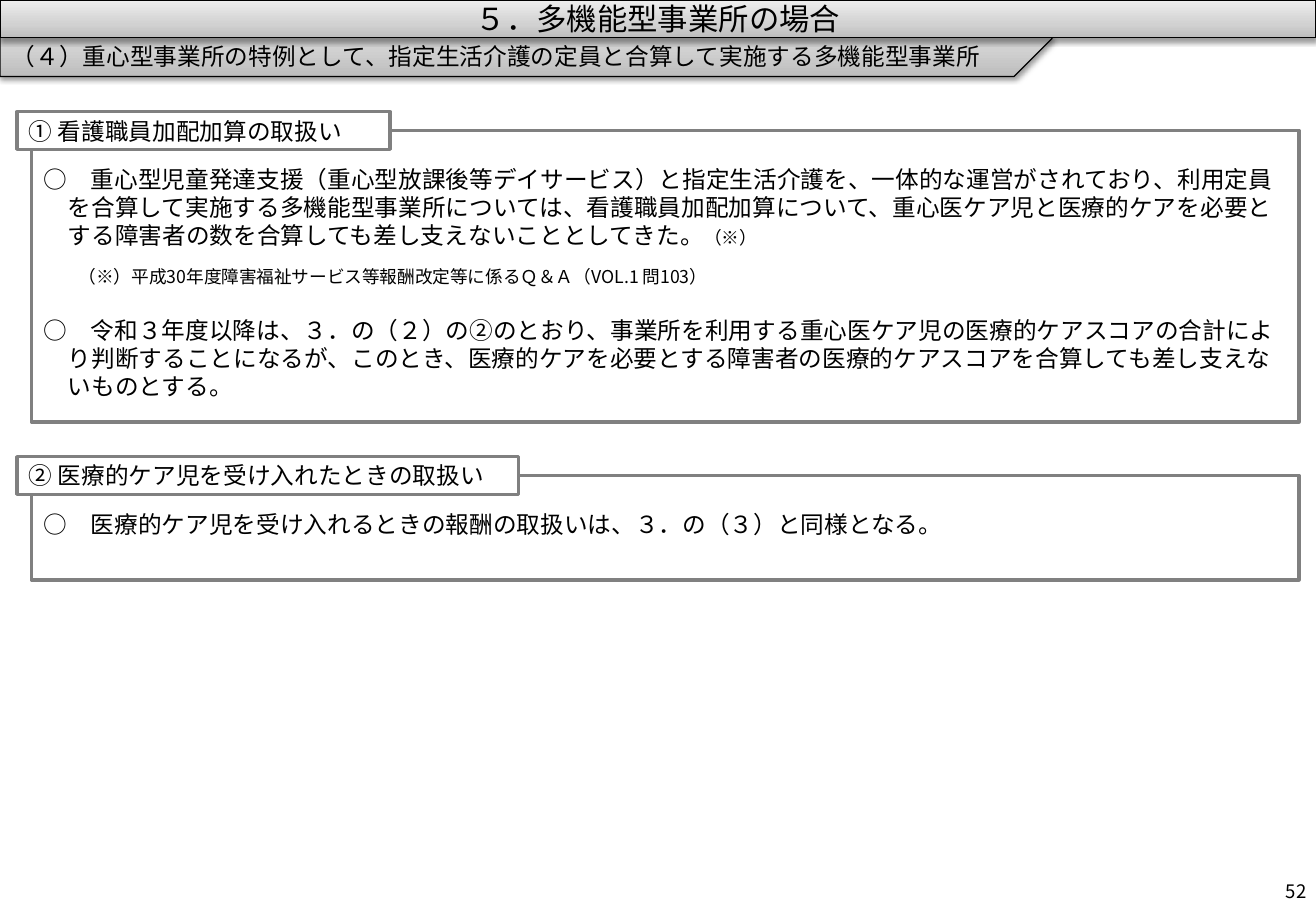
from copy import deepcopy

from lxml import etree
from pptx import Presentation
from pptx.dml.color import RGBColor
from pptx.enum import shapes, text
from pptx.oxml.ns import qn
from pptx.util import Inches, Pt

FONT = "Noto Sans CJK JP"
BLACK, GRAY, WHITE = "000000", "808080", "FFFFFF"
BAR_STOPS = [(0, "BDBDBD"), (0.35, "D1D1D1"), (1, "EEEEEE")]
WIDTH, HEIGHT = 10.83, 7.5

TITLE = "５．多機能型事業所の場合"
SUBTITLE = "（４）重心型事業所の特例として、指定生活介護の定員と合算して実施する多機能型事業所"
PAGE = "52"

# Each paragraph: runs of (text, size), left margin, first-line indent, space before
SECTIONS = [
    {
        "label": "① 看護職員加配加算の取扱い",
        "top": 0.92, "label_width": 3.07, "body_height": 2.4,
        "paragraphs": [
            ([("○　重心型児童発達支援（重心型放課後等デイサービス）と指定生活介護を、"
               "一体的な運営がされており、利用定員を合算して実施する多機能型事業所については、"
               "看護職員加配加算について、重心医ケア児と医療的ケアを必要とする障害者の数を"
               "合算しても差し支えないこととしてきた。", 14), ("（※）", 10.5)], 0.2, -0.2, 0),
            ([("（※）平成30年度障害福祉サービス等報酬改定等に係るＱ＆Ａ（VOL.1 問103）", 10.5)],
             0.29, 0, 9.6),
            ([("○　令和３年度以降は、３．の（２）の②のとおり、事業所を利用する"
               "重心医ケア児の医療的ケアスコアの合計により判断することになるが、このとき、"
               "医療的ケアを必要とする障害者の医療的ケアスコアを合算しても"
               "差し支えないものとする。", 14)], 0.2, -0.2, 16.8),
        ],
    },
    {
        "label": "② 医療的ケア児を受け入れたときの取扱い",
        "top": 3.76, "label_width": 4.13, "body_height": 0.86,
        "paragraphs": [
            ([("○　医療的ケア児を受け入れるときの報酬の取扱いは、３．の（３）と同様となる。", 14)],
             0.2, -0.2, 0),
        ],
    },
]


def color(hex_string):
    return RGBColor.from_string(hex_string)


def place(sp, left, top, width, height):
    sp.left, sp.top, sp.width, sp.height = map(Inches, (left, top, width, height))


def add_box(slide, kind, *at):
    sp = slide.shapes.add_shape(kind, *map(Inches, at))
    sp.shadow.inherit = False
    return sp


def add_frame(slide, *at, alpha=None):
    """Add a white rectangle with a gray border; alpha is its opacity in percent."""
    sp = add_box(slide, shapes.MSO_SHAPE.RECTANGLE, *at)
    sp.fill.solid()
    sp.fill.fore_color.rgb = color(WHITE)
    if alpha is not None:
        rgb = sp.element.spPr.find(f"{qn('a:solidFill')}/{qn('a:srgbClr')}")
        etree.SubElement(rgb, qn("a:alpha"), val=str(alpha * 1000))
    sp.line.color.rgb = color(GRAY)
    sp.line.width = Pt(2)
    return sp


def style_bar(sp):
    """Give a heading bar its gradient, thin outline and soft shadow."""
    sp.fill.gradient()
    sp.fill.gradient_angle = 90
    stop_list = sp.element.spPr.find(f"{qn('a:gradFill')}/{qn('a:gsLst')}")
    stop_list.insert(1, deepcopy(stop_list[0]))
    for stop, (position, shade) in zip(sp.fill.gradient_stops, BAR_STOPS):
        stop.position = position
        stop.color.rgb = color(shade)
    sp.line.color.rgb = color(BLACK)
    sp.line.width = Pt(0.75)
    sp.shadow.inherit = False
    effects = sp.element.spPr.find(qn("a:effectLst"))
    shadow = etree.SubElement(effects, qn("a:outerShdw"), blurRad=str(Pt(3.1)),
                              dist=str(Pt(1.6)), dir="5400000", rotWithShape="0")
    rgb = etree.SubElement(shadow, qn("a:srgbClr"), val=BLACK)
    etree.SubElement(rgb, qn("a:alpha"), val="38000")


def set_frame(tf, anchor, insets=(0.1, 0.05, 0.1, 0.05)):
    tf.word_wrap = True
    tf.auto_size = text.MSO_AUTO_SIZE.NONE
    tf.vertical_anchor = anchor
    tf.margin_left, tf.margin_top, tf.margin_right, tf.margin_bottom = map(Inches, insets)


def write(p, content, size=14, align=text.PP_ALIGN.LEFT, margin=0, indent=0):
    """Add one formatted run to a paragraph and set the paragraph's indents."""
    p.alignment = align
    pPr = p._p.get_or_add_pPr()
    pPr.set("marL", str(Inches(margin)))
    pPr.set("indent", str(Inches(indent)))
    r = p.add_run()
    r.text = content
    r.font.size = Pt(size)
    r.font.color.rgb = color(BLACK)
    r.font.name = FONT
    latin = r.font._element.find(qn("a:latin"))
    latin.addnext(latin.makeelement(qn("a:ea"), typeface=FONT))


def add_section(slide, section):
    top = section["top"]
    body = add_frame(slide, 0.26, top + 0.155, 10.43, section["body_height"], alpha=5)
    tf = body.text_frame
    set_frame(tf, text.MSO_ANCHOR.TOP, (0.1, 0.28, 0.1, 0.08))
    for i, (runs, margin, indent, before) in enumerate(section["paragraphs"]):
        p = tf.add_paragraph() if i else tf.paragraphs[0]
        p.space_before = Pt(before)
        p.line_spacing = Pt(runs[0][1] * 1.2)
        for content, size in runs:
            write(p, content, size=size, margin=margin, indent=indent)

    label = add_frame(slide, 0.14, top, section["label_width"], 0.31)
    set_frame(label.text_frame, text.MSO_ANCHOR.MIDDLE, (0.1, 0.08, 0.1, 0.08))
    write(label.text_frame.paragraphs[0], section["label"], margin=0.19, indent=-0.19)


def main():
    prs = Presentation()
    prs.slide_width, prs.slide_height = Inches(WIDTH), Inches(HEIGHT)
    slide = prs.slides.add_slide(prs.slide_layouts[5])

    subtitle = add_box(slide, shapes.MSO_SHAPE.PENTAGON, 0, 0, 8.66, 0.63)
    style_bar(subtitle)
    set_frame(subtitle.text_frame, text.MSO_ANCHOR.BOTTOM)
    write(subtitle.text_frame.paragraphs[0], SUBTITLE)

    title = slide.shapes.title
    place(title, 0, 0, WIDTH, 0.31)
    style_bar(title)
    set_frame(title.text_frame, text.MSO_ANCHOR.MIDDLE)
    write(title.text_frame.paragraphs[0], TITLE, size=18, align=text.PP_ALIGN.CENTER)
    subtitle.element.addnext(title.element)

    for section in SECTIONS:
        add_section(slide, section)

    page = slide.shapes.add_textbox(*map(Inches, (8.32, 7.14, 2.53, 0.4)))
    set_frame(page.text_frame, text.MSO_ANCHOR.MIDDLE)
    write(page.text_frame.paragraphs[0], PAGE, size=11, align=text.PP_ALIGN.RIGHT)

    prs.save("out.pptx")


if __name__ == "__main__":
    main()
